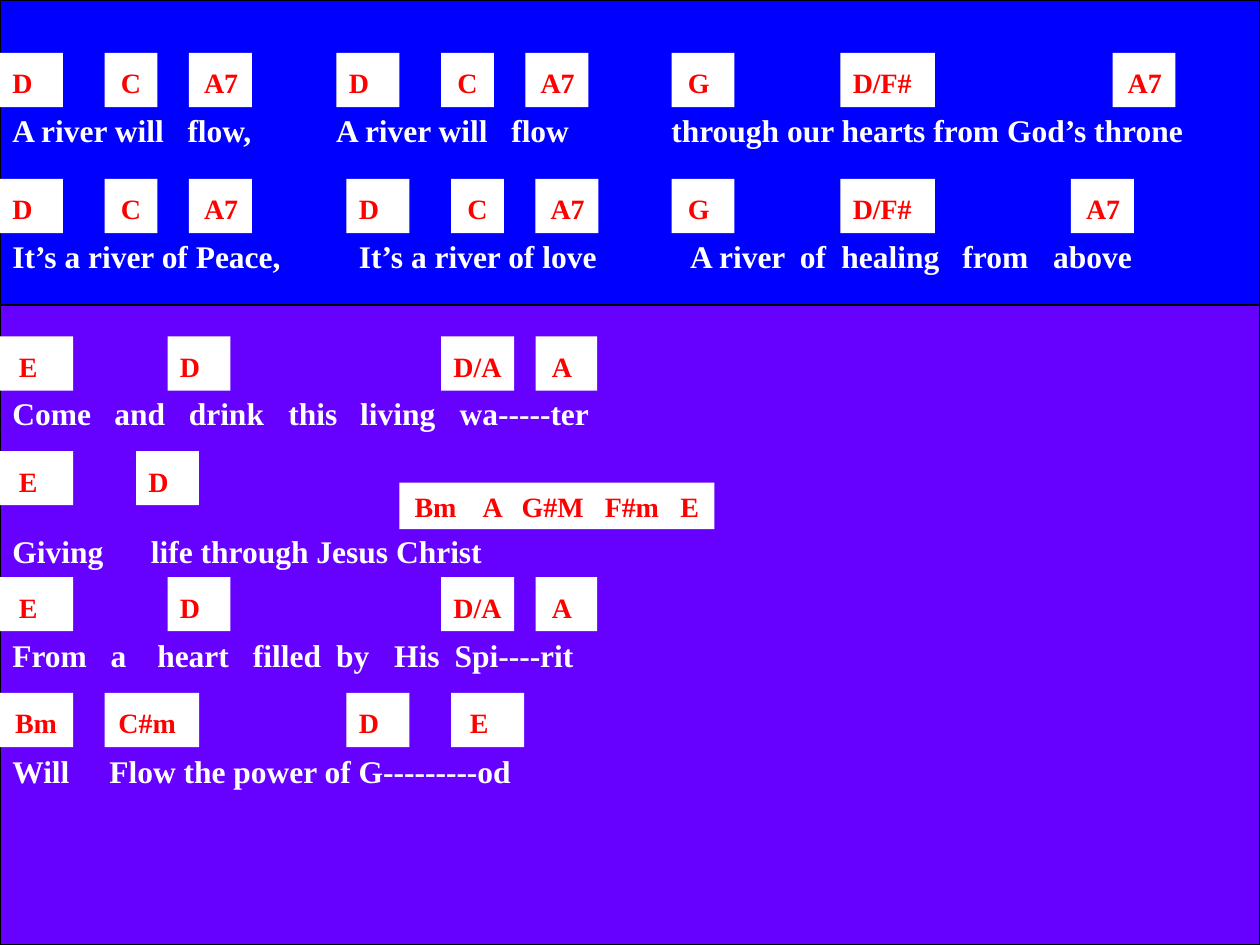
from dataclasses import dataclass

from lxml import etree
from pptx import Presentation
from pptx.dml.color import RGBColor
from pptx.enum.shapes import MSO_SHAPE
from pptx.enum.text import MSO_ANCHOR, PP_ALIGN
from pptx.oxml.ns import qn
from pptx.util import Inches, Pt

RECT = MSO_SHAPE.RECTANGLE
BOTTOM = MSO_ANCHOR.BOTTOM
LEFT = PP_ALIGN.LEFT
FONT = "Times New Roman"
BLUE, PURPLE, WHITE, RED, BLACK = "0000FF", "6600FF", "FFFFFF", "FF0000", "000000"
LYRIC_INSET = 0.1
LYRIC_HEIGHT = 0.4
CHORD_HEIGHT = 0.43

# Chord name: (box width, left inset of its text)
CHORD_BOXES = {
    "A": (0.49, 0.13), "A7": (0.5, 0.12), "Bm": (0.58, 0.12), "C": (0.42, 0.13),
    "C#m": (0.75, 0.11), "D": (0.5, 0.1), "D/A": (0.58, 0.1),
    "D/F#": (0.75, 0.1), "E": (0.58, 0.15), "G": (0.5, 0.13),
}


@dataclass
class Verse:
    """A lyric line: its words, the slide x of each tab, and the chords above."""
    top: float
    width: float
    words: str
    tabs: list[float]
    chord_top: float
    chords: list[tuple[str, float]]


LIVING_WATER_CHORDS = [("E", 0), ("D", 1.33), ("D/A", 3.5), ("A", 4.25)]
VERSES = [
    Verse(0.83, 10,
          "A river will\tflow,\tA river will\tflow\tthrough our hearts from God’s throne",
          [1.49, 2.67, 4.06, 5.33], 0.42,
          [("D", 0), ("C", 0.83), ("A7", 1.5), ("D", 2.67), ("C", 3.5), ("A7", 4.17),
           ("G", 5.33), ("D/F#", 6.67), ("A7", 8.83)]),
    Verse(1.83, 10,
          "It’s a river of Peace,\tIt’s a river of love\tA river\tof\thealing\tfrom\tabove",
          [2.85, 5.48, 6.35, 6.68, 7.64, 8.36], 1.42,
          [("D", 0), ("C", 0.83), ("A7", 1.5), ("D", 2.75), ("C", 3.58), ("A7", 4.25),
           ("G", 5.33), ("D/F#", 6.67), ("A7", 8.5)]),
    Verse(3.08, 9.75, "Come\tand\tdrink\tthis\tliving\twa-----ter",
          [0.91, 1.5, 2.29, 2.86, 3.65], 2.67, LIVING_WATER_CHORDS),
    Verse(4.17, 7.5, "Giving\tlife through Jesus Christ",
          [1.2], 3.58, [("E", 0), ("D", 1.08)]),
    Verse(5, 10, "From\ta\theart\tfilled\tby\tHis\tSpi----rit",
          [0.88, 1.25, 2.01, 2.67, 3.13, 3.61], 4.58, LIVING_WATER_CHORDS),
    Verse(5.92, 5.5, "Will\tFlow the power of G---------od",
          [0.87], 5.5, [("Bm", 0), ("C#m", 0.83), ("D", 2.75), ("E", 3.58)]),
]


def color(value: str) -> RGBColor:
    return RGBColor.from_string(value)


def add_rect(slide, left: float, top: float, width: float, height: float, fill: str):
    sp = slide.shapes.add_shape(RECT, Inches(left), Inches(top), Inches(width), Inches(height))
    sp.shadow.inherit = False
    sp.fill.solid()
    sp.fill.fore_color.rgb = color(fill)
    sp.line.fill.background()
    return sp


def add_panel(slide, top: float, height: float, fill: str) -> None:
    sp = add_rect(slide, 0, top, 10, height, fill)
    sp.line.color.rgb = color(BLACK)
    sp.line.width = Pt(0.75)


def write(sp, text: str, size: float, text_color: str, inset: float,
          bottom: float = 0.05, tabs: tuple[float, ...] | list[float] = ()) -> None:
    """Set one bold line; tabs are slide positions in inches."""
    tf = sp.text_frame
    tf.word_wrap = True
    tf.vertical_anchor = BOTTOM
    tf.margin_left, tf.margin_right = Inches(inset), 0
    tf.margin_top, tf.margin_bottom = 0, Inches(bottom)
    p = tf.paragraphs[0]
    p.text = text
    p.alignment = LEFT
    if tabs:
        tab_list = etree.SubElement(p._p.get_or_add_pPr(), qn("a:tabLst"))
        for x in tabs:
            position = Inches(x) - sp.left - Inches(inset)
            etree.SubElement(tab_list, qn("a:tab"), pos=str(position), algn="l")
    p.font.name = FONT
    p.font.size = Pt(size)
    p.font.bold = True
    p.font.color.rgb = color(text_color)


def add_chord(slide, name: str, left: float, top: float) -> None:
    width, inset = CHORD_BOXES[name]
    sp = add_rect(slide, left, top, width, CHORD_HEIGHT, WHITE)
    write(sp, name, 16, RED, inset, bottom=0.06)


def add_verse(slide, verse: Verse) -> None:
    sp = slide.shapes.add_textbox(0, Inches(verse.top), Inches(verse.width), Inches(LYRIC_HEIGHT))
    write(sp, verse.words, 18, WHITE, LYRIC_INSET, tabs=verse.tabs)
    for name, left in verse.chords:
        add_chord(slide, name, left, verse.chord_top)


def main() -> None:
    prs = Presentation()
    prs.slide_width, prs.slide_height = Inches(10), Inches(7.5)
    slide = prs.slides.add_slide(prs.slide_layouts[6])
    add_panel(slide, 0, 2.42, BLUE)
    add_panel(slide, 2.42, 5.08, PURPLE)
    for verse in VERSES:
        add_verse(slide, verse)
    chord_run = add_rect(slide, 3.17, 3.83, 2.5, 0.37, WHITE)
    write(chord_run, "Bm\tA\tG#M\tF#m\tE", 16, RED, 0.12, tabs=[3.83, 4.14, 4.8, 5.4])
    prs.save("out.pptx")


if __name__ == "__main__":
    main()
